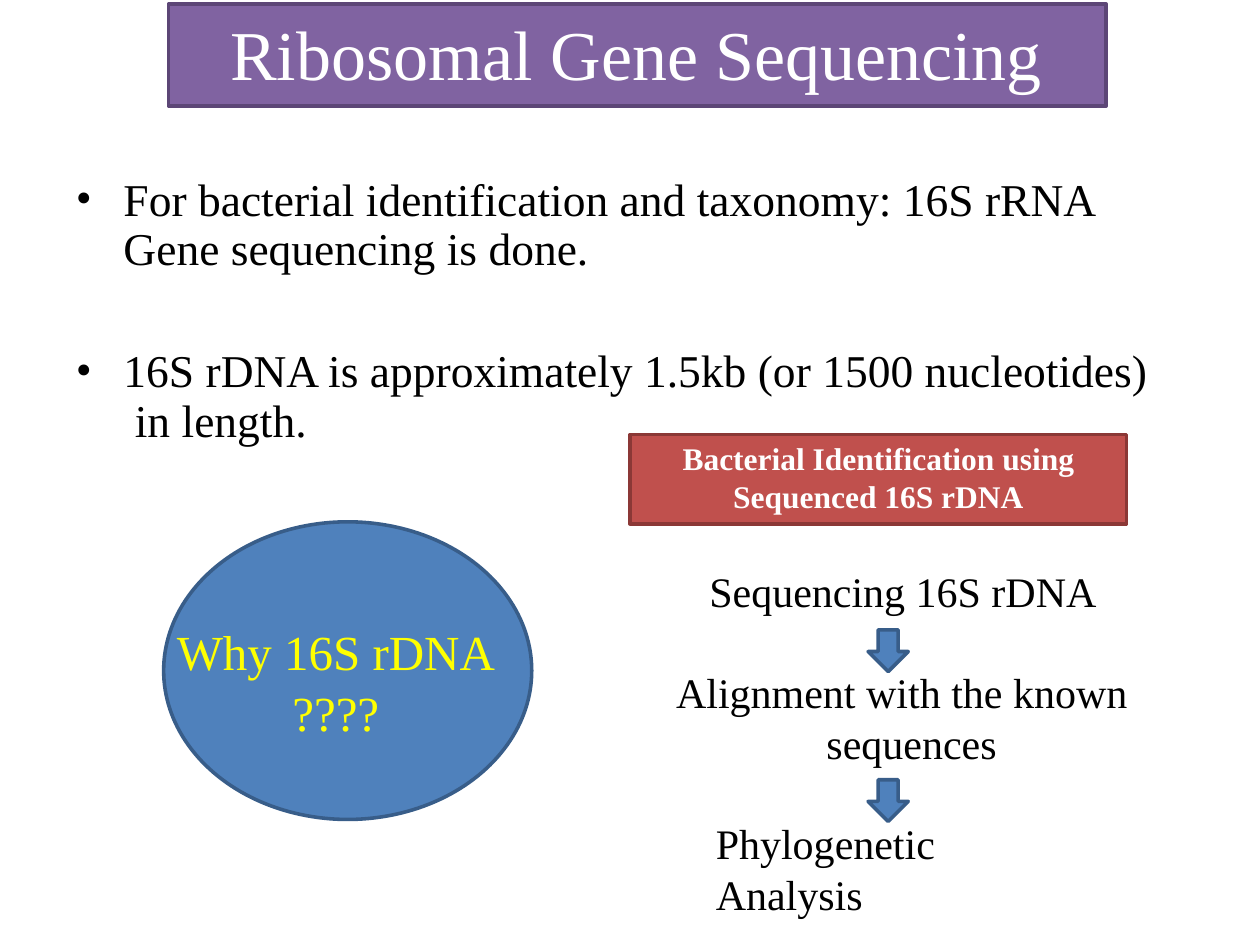
import dataclasses
import typing

import lxml.etree
import pptx
import pptx.dml.color
import pptx.enum.shapes
import pptx.enum.text
import pptx.oxml.ns
import pptx.util

COLORS = {
    "white": "FFFFFF",
    "black": "000000",
    "yellow": "FFFF00",
    "purple": "8063A1",
    "purple_line": "5C4676",
    "red": "C0504D",
    "red_line": "8B3836",
    "blue": "4F81BC",
    "blue_line": "385D89",
}
FONT = "Times New Roman"
LINE_WIDTH = 2.04
ARROW_LEFT, ARROW_WIDTH, ARROW_HEIGHT = 17.5, 0.81, 0.84
ARROW_TOPS = (12.7, 15.72)
SHAPES = pptx.enum.shapes.MSO_SHAPE
ALIGN = pptx.enum.text.PP_ALIGN


class Box(typing.NamedTuple):
    left: float
    top: float
    width: float
    height: float

    def lengths(self) -> list[pptx.util.Length]:
        return [pptx.util.Cm(value) for value in self]


@dataclasses.dataclass
class TextStyle:
    size: float
    color: str = "black"
    bold: bool = False
    align: typing.Any = ALIGN.LEFT
    margin: float = 0
    indent: float = 0
    inset_top: float = 0.03
    space_before: float = 1
    line_spacing: float | None = None


@dataclasses.dataclass
class Label:
    text: str
    box: Box
    style: TextStyle


TITLE_STYLE = TextStyle(40, "white", margin=1.24, inset_top=0.13, space_before=3.6)
BODY_STYLE = TextStyle(26, margin=0.99, indent=-0.96, inset_top=0.15,
                       space_before=4.5, line_spacing=28.1)
HEADING_STYLE = TextStyle(18, "white", True, margin=2.08, indent=-1.02,
                          inset_top=0.1, space_before=3)
QUESTION_STYLE = TextStyle(28, "yellow", align=ALIGN.CENTER)
STEP_STYLE = TextStyle(24, margin=0.03)
HANGING_STEP_STYLE = TextStyle(24, margin=2.84, indent=-2.82)

BODY_TEXT = (
    "For bacterial identification and taxonomy: 16S rRNA  Gene sequencing is done.\n"
    "16S rDNA is approximately 1.5kb (or 1500 nucleotides)  in length."
)
LABELS = [
    Label("Why 16S rDNA\n????", Box(3.28, 12.5, 6.98, 2.44), QUESTION_STYLE),
    Label("Sequencing 16S rDNA", Box(14.27, 11.38, 8.1, 1.09), STEP_STYLE),
    Label("Alignment with the known  sequences", Box(13.61, 13.41, 9.25, 2.11),
          HANGING_STEP_STYLE),
    Label("Phylogenetic Analysis", Box(14.4, 16.46, 7.4, 2.1), STEP_STYLE),
]


def rgb(name: str) -> pptx.dml.color.RGBColor:
    return pptx.dml.color.RGBColor.from_string(COLORS[name])


def paint(shape, color: str) -> None:
    shape.fill.solid()
    shape.fill.fore_color.rgb = rgb(color)
    shape.line.color.rgb = rgb(f"{color}_line")
    shape.line.width = pptx.util.Pt(LINE_WIDTH)


def write(shape, text: str, style: TextStyle) -> None:
    frame = shape.text_frame
    frame.text = text
    frame.word_wrap = True
    frame.auto_size = pptx.enum.text.MSO_AUTO_SIZE.NONE
    frame.vertical_anchor = pptx.enum.text.MSO_ANCHOR.TOP
    frame.margin_left = frame.margin_right = frame.margin_bottom = 0
    frame.margin_top = pptx.util.Cm(style.inset_top)
    for paragraph in frame.paragraphs:
        paragraph.alignment = style.align
        paragraph.space_before = pptx.util.Pt(style.space_before)
        if style.line_spacing:
            paragraph.line_spacing = pptx.util.Pt(style.line_spacing)
        properties = paragraph._p.get_or_add_pPr()
        properties.set("marL", str(pptx.util.Cm(style.margin)))
        properties.set("indent", str(pptx.util.Cm(style.indent)))
        for run in paragraph.runs:
            run.font.name = FONT
            run.font.size = pptx.util.Pt(style.size)
            run.font.bold = style.bold
            run.font.color.rgb = rgb(style.color)


def add_bullet(paragraph) -> None:
    properties = paragraph._p.get_or_add_pPr()
    qn = pptx.oxml.ns.qn
    lxml.etree.SubElement(properties, qn("a:buFont"), typeface=FONT)
    lxml.etree.SubElement(properties, qn("a:buChar"), char="•")


def add_painted_shape(slide, kind, box: Box, color: str):
    shape = slide.shapes.add_shape(kind, *box.lengths())
    shape.shadow.inherit = False
    paint(shape, color)
    return shape


def add_label(slide, label: Label):
    shape = slide.shapes.add_textbox(*label.box.lengths())
    write(shape, label.text, label.style)
    return shape


def main() -> None:
    presentation = pptx.Presentation()
    presentation.slide_width = pptx.util.Cm(25.4)
    presentation.slide_height = pptx.util.Cm(19.05)
    slide = presentation.slides.add_slide(presentation.slide_layouts[5])

    title = slide.shapes.title
    title.left, title.top, title.width, title.height = Box(3.4, 0.08, 18.9, 2.06).lengths()
    paint(title, "purple")
    write(title, "Ribosomal Gene Sequencing", TITLE_STYLE)

    body = add_label(slide, Label(BODY_TEXT, Box(1.5, 3.4, 21.67, 5.59), BODY_STYLE))
    for paragraph in body.text_frame.paragraphs:
        add_bullet(paragraph)
    body.text_frame.paragraphs[1].space_before = pptx.util.Pt(42)

    heading = add_painted_shape(slide, SHAPES.RECTANGLE, Box(12.7, 8.76, 10.01, 1.8), "red")
    write(heading, "Bacterial Identification using  Sequenced 16S rDNA", HEADING_STYLE)

    add_painted_shape(slide, SHAPES.OVAL, Box(3.3, 10.52, 7.42, 6), "blue")
    for label in LABELS:
        add_label(slide, label)
    for top in ARROW_TOPS:
        arrow_box = Box(ARROW_LEFT, top, ARROW_WIDTH, ARROW_HEIGHT)
        add_painted_shape(slide, SHAPES.DOWN_ARROW, arrow_box, "blue")

    presentation.save("out.pptx")


if __name__ == "__main__":
    main()
